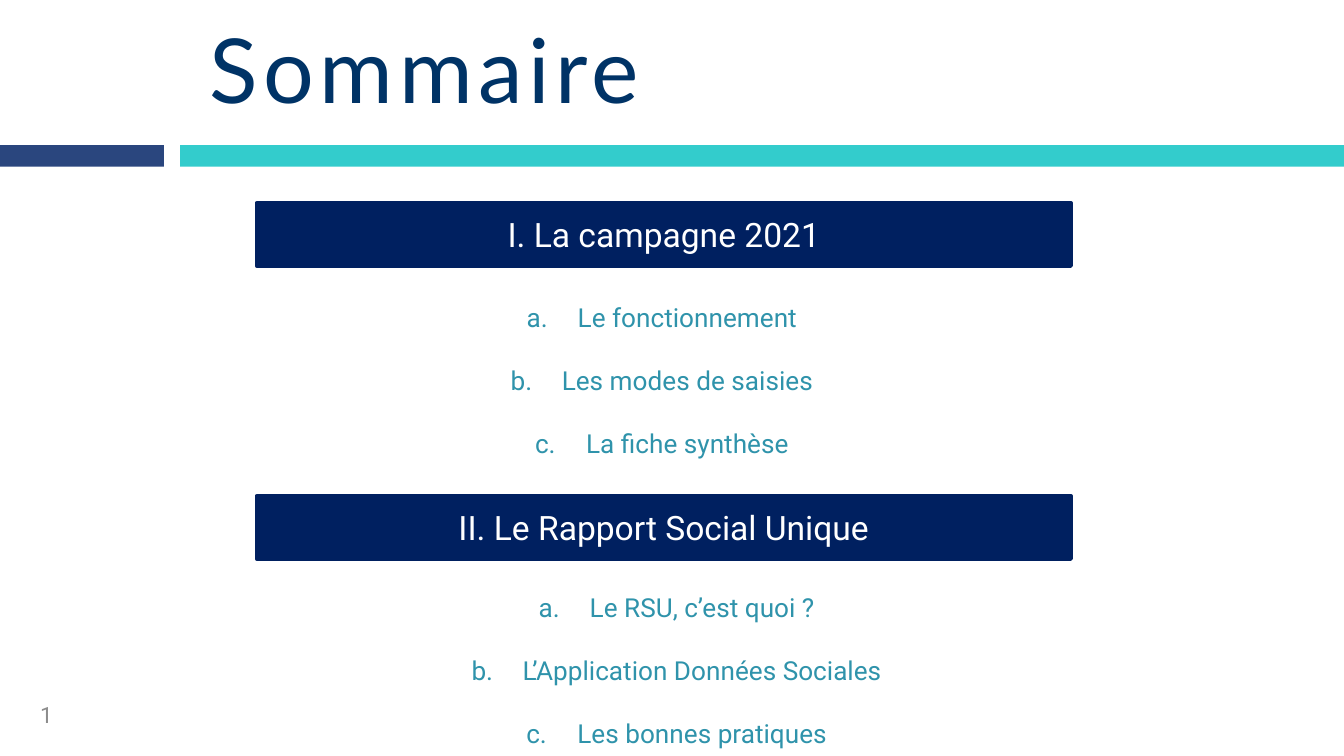
from lxml import etree
from pptx import Presentation, util as u
from pptx.dml.color import RGBColor
from pptx.enum import shapes, text
from pptx.oxml.ns import qn

THEME = {
    "navy": RGBColor.from_string("002060"),
    "blue": RGBColor.from_string("2A467E"),
    "turquoise": RGBColor.from_string("33CCCC"),
    "title": {"name": "Lato", "size": u.Pt(48), "color": "003366"},
    "section": {"name": "Roboto", "size": u.Pt(18), "color": "FFFFFF"},
    "item": {"name": "Roboto", "size": u.Pt(14), "color": "2F93AB"},
    "number": {"name": "Roboto", "size": u.Pt(12), "color": "8C8C8C"},
}
SECTIONS = [
    ("I. La campagne 2021", 1.51, (2.47, 2.19),
     ["Le fonctionnement", "Les modes de saisies", "La fiche synthèse"]),
    ("II. Le Rapport Social Unique", 3.69, (2.58, 4.35),
     ["Le RSU, c’est quoi ?", "L’Application Données Sociales", "Les bonnes pratiques"]),
]


def apply_font(font, role):
    for key, value in THEME[role].items():
        if key == "color":
            font.color.rgb = RGBColor.from_string(value)
        else:
            setattr(font, key, value)


def add_bar(left, top, width, height, color):
    bar = slide.shapes.add_shape(
        shapes.MSO_SHAPE.RECTANGLE, *map(u.Inches, (left, top, width, height)))
    bar.shadow.inherit = False
    bar.fill.solid()
    bar.fill.fore_color.rgb = color
    bar.line.fill.background()
    return bar


prs = Presentation()
prs.slide_width = u.Inches(10)
prs.slide_height = u.Inches(10 * 9 / 16)
slide = prs.slides.add_slide(prs.slide_layouts.get_by_name("Two Content"))

# Header
add_bar(1.34, 1.08, 8.66, 0.16, THEME["turquoise"])
add_bar(0, 1.08, 1.22, 0.16, THEME["blue"])

title = slide.shapes.title
title.left, title.top, title.width, title.height = map(u.Inches, (1.06, 0.08, 7.72, 0.84))
title.text_frame.text = "Sommaire"
title.text_frame.auto_size = text.MSO_AUTO_SIZE.NONE
title.text_frame.vertical_anchor = text.MSO_ANCHOR.MIDDLE
heading = title.text_frame.paragraphs[0]
heading.alignment = text.PP_ALIGN.LEFT
heading._p.get_or_add_pPr().set("marL", str(u.Inches(0.4)))
apply_font(heading.runs[0].font, "title")
heading.runs[0].font._element.set("spc", "300")

# Sections, each a banner with its lettered list
for index, (name, banner_top, (left, top), items) in enumerate(SECTIONS, start=1):
    banner = add_bar(1.91, banner_top, 6.06, 0.47, THEME["navy"])
    banner.line.color.rgb = THEME["navy"]
    banner.line.width = u.Pt(2)
    banner.text_frame.text = name
    banner.text_frame.vertical_anchor = text.MSO_ANCHOR.MIDDLE
    banner_line = banner.text_frame.paragraphs[0]
    banner_line.alignment = text.PP_ALIGN.CENTER
    apply_font(banner_line.runs[0].font, "section")

    topics = slide.placeholders[index]
    topics.left, topics.top, topics.width, topics.height = map(
        u.Inches, (left, top, 4.91, 1.28))
    topics.text_frame.text = "\n".join(items)
    topics.text_frame.auto_size = text.MSO_AUTO_SIZE.SHAPE_TO_FIT_TEXT
    for position, topic in enumerate(topics.text_frame.paragraphs):
        topic.alignment = text.PP_ALIGN.CENTER
        topic.space_before = u.Pt(17 if position else 0)
        properties = topic._p.get_or_add_pPr()
        properties.set("marL", str(u.Inches(0.38)))
        properties.set("indent", str(u.Inches(-0.38)))
        etree.SubElement(properties, qn("a:buFont"), typeface="+mj-lt")
        etree.SubElement(properties, qn("a:buAutoNum"), type="alphaLcPeriod")
        apply_font(topic.runs[0].font, "item")

# Page number
page = slide.shapes.add_textbox(*map(u.Inches, (0.2, 5.17, 2.33, 0.3)))
page.text_frame.word_wrap = True
page.text_frame.vertical_anchor = text.MSO_ANCHOR.MIDDLE
page.text_frame.text = "1"
apply_font(page.text_frame.paragraphs[0].runs[0].font, "number")

prs.save("out.pptx")
